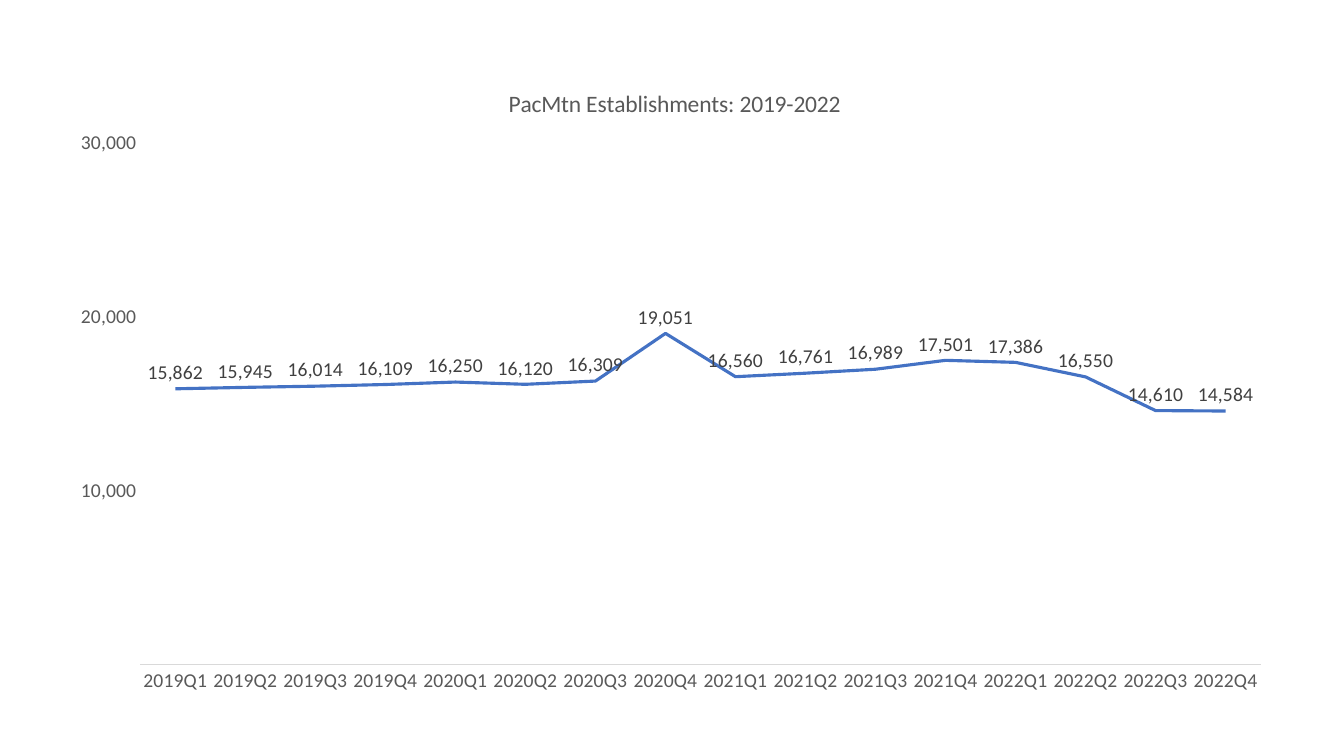
"""Build a slide with a line chart of quarterly PacMtn establishments."""
from dataclasses import dataclass
from itertools import product

from lxml import etree
from pptx import Presentation
from pptx import util as u
from pptx.chart import data as chart_data
from pptx.dml.color import RGBColor
from pptx.enum import chart as ch
from pptx.oxml import ns


@dataclass(frozen=True)
class Theme:
    font: str = "Calibri"
    title_size: float = 16.8
    text_size: float = 14
    line_width: float = 2.25
    axis_width: float = 0.75
    muted: str = "595959"
    label: str = "404040"
    axis: str = "D9D9D9"
    trend: str = "4472C4"
    number_format: str = "#,###"


@dataclass(frozen=True)
class Quarter:
    name: str
    establishments: int


THEME = Theme()
TITLE = "PacMtn Establishments: 2019-2022"
COUNTS = (
    15862, 15945, 16014, 16109,
    16250, 16120, 16309, 19051,
    16560, 16761, 16989, 17501,
    17386, 16550, 14610, 14584,
)
QUARTERS = [
    Quarter(f"{year}Q{number}", count)
    for (year, number), count in zip(product(range(2019, 2023), range(1, 5)), COUNTS)
]


def style_font(font, color: str, size: float = THEME.text_size) -> None:
    font.name = THEME.font
    font.size = u.Pt(size)
    font.bold = False
    font.color.rgb = RGBColor.from_string(color)


def style_line(line, color: str, width: float) -> None:
    line.color.rgb = RGBColor.from_string(color)
    line.width = u.Pt(width)


def place(element, index: int, **fractions: float) -> None:
    for previous in element.findall(ns.qn("c:layout")):
        element.remove(previous)
    layout = etree.Element(ns.qn("c:layout"))
    manual = etree.SubElement(layout, ns.qn("c:manualLayout"))
    settings = {"xMode": "edge", "yMode": "edge", **fractions}
    if "w" in fractions:
        settings = {"layoutTarget": "inner", **settings}
    for tag, value in settings.items():
        etree.SubElement(manual, ns.qn(f"c:{tag}")).set("val", str(value))
    element.insert(index, layout)


def add_establishments_chart(slide) -> None:
    figures = chart_data.CategoryChartData(number_format=THEME.number_format)
    figures.categories = [quarter.name for quarter in QUARTERS]
    figures.add_series("Series 1", [quarter.establishments for quarter in QUARTERS])
    chart = slide.shapes.add_chart(
        ch.XL_CHART_TYPE.LINE,
        u.Cm(1.4), u.Cm(1.45), u.Cm(30.99), u.Cm(16.33), figures,
    ).chart
    chart.has_legend = False
    style_font(chart.font, THEME.muted)

    chart.has_title = True
    heading = chart.chart_title
    heading.text_frame.text = TITLE
    style_font(heading.text_frame.paragraphs[0].runs[0].font, THEME.muted, THEME.title_size)
    heading.include_in_layout = False
    place(heading._element, 1, x=0.365, y=0.04)
    place(chart._chartSpace.chart.plotArea, 0, x=0.069, y=0.132, w=0.911, h=0.805)

    quarters, counts = chart.category_axis, chart.value_axis
    for axis in (quarters, counts):
        axis.has_major_gridlines = False
        axis.major_tick_mark = axis.minor_tick_mark = ch.XL_TICK_MARK.NONE
        style_font(axis.tick_labels.font, THEME.muted)
    style_line(quarters.format.line, THEME.axis, THEME.axis_width)
    counts.format.line.fill.background()
    counts.minimum_scale, counts.maximum_scale, counts.major_unit = 0, 30000, 10000
    counts.tick_labels.number_format = THEME.number_format
    counts.tick_labels.number_format_is_linked = False

    chart.plots[0].vary_by_categories = False
    trend = chart.plots[0].series[0]
    trend.smooth = False
    trend.marker.style = ch.XL_MARKER_STYLE.NONE
    style_line(trend.format.line, THEME.trend, THEME.line_width)
    labels = trend.data_labels
    labels.show_value = True
    labels.position = ch.XL_LABEL_POSITION.ABOVE
    labels.number_format = THEME.number_format
    labels.number_format_is_linked = False
    style_font(labels.font, THEME.label)


def main() -> None:
    deck = Presentation()
    deck.slide_width, deck.slide_height = u.Cm(33.87), u.Cm(19.05)
    add_establishments_chart(deck.slides.add_slide(deck.slide_layouts[6]))
    deck.save("out.pptx")


if __name__ == "__main__":
    main()
